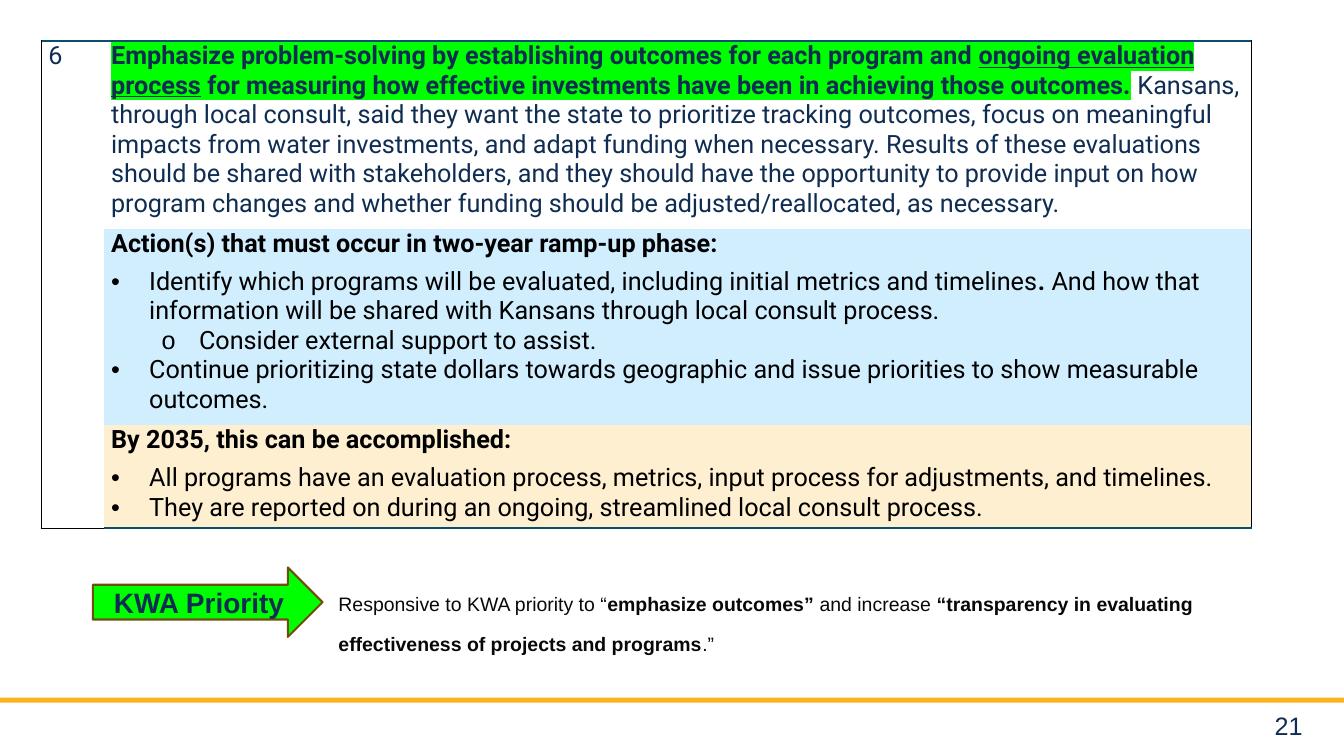
from lxml import etree
from pptx import Presentation
from pptx.dml.color import RGBColor
from pptx.enum.shapes import MSO_SHAPE
from pptx.enum.text import MSO_ANCHOR, PP_ALIGN
from pptx.oxml.ns import qn
from pptx.util import Cm, Pt

NAVY, BLACK, INK = "0F2D52", "000000", "080808"
GREEN, GOLD, BROWN, TEAL = "00FF00", "FCB31C", "6E4E0C", "074F6A"
PALE_BLUE, PALE_ORANGE = "D1EEFF", "FEEFD1"
EDGES = ("L", "R", "T", "B")


def rgb(color):
    return RGBColor.from_string(color)


def add_run(paragraph, text, size=18, font="Roboto", color=NAVY, bold=False,
            underline=False, highlight=None, baseline=None):
    run = paragraph.add_run()
    run.text = text
    run.font.size = Pt(size)
    run.font.name = font
    run.font.bold = bold
    run.font.underline = underline
    run.font.color.rgb = rgb(color)
    properties = run._r.get_or_add_rPr()
    if baseline:
        properties.set("baseline", str(baseline))
    if highlight:
        marker = etree.Element(qn("a:highlight"))
        etree.SubElement(marker, qn("a:srgbClr"), val=highlight)
        properties.find(qn("a:solidFill")).addnext(marker)


def set_bullet(paragraph, char, left, hanging):
    properties = paragraph._p.get_or_add_pPr()
    properties.set("marL", str(Cm(left)))
    properties.set("indent", str(-Cm(hanging)))
    etree.SubElement(properties, qn("a:buFont"), typeface="Arial")
    etree.SubElement(properties, qn("a:buChar"), char=char)


def style_cell(cell, fill=None, **borders):
    cell.margin_left = cell.margin_right = Cm(0.18)
    cell.margin_top = cell.margin_bottom = 0
    if fill:
        cell.fill.solid()
        cell.fill.fore_color.rgb = rgb(fill)
    else:
        cell.fill.background()
    properties = cell._tc.get_or_add_tcPr()
    for position, edge in enumerate(EDGES):
        color, width = borders.get(edge, (None, 0))
        line = etree.Element(qn(f"a:ln{edge}"), w=str(Pt(width)))
        if color:
            solid = etree.SubElement(line, qn("a:solidFill"))
            etree.SubElement(solid, qn("a:srgbClr"), val=color)
        else:
            etree.SubElement(line, qn("a:noFill"))
        properties.insert(position, line)


def fill_actions(cell, heading, items):
    title = cell.text_frame.paragraphs[0]
    title.space_after = Pt(6)
    add_run(title, heading, color=BLACK, bold=True)
    for level, pieces in items:
        item = cell.text_frame.add_paragraph()
        item.level = level
        if level:
            set_bullet(item, "o", 2.06, 0.79)
        else:
            set_bullet(item, "•", 0.96, 0.96)
        for text, bold in pieces:
            add_run(item, text, color=BLACK, bold=bold)


def add_recommendation(slide, left, top, width, height):
    table = slide.shapes.add_table(3, 2, Cm(left), Cm(top), Cm(width), Cm(height)).table
    table.first_row = table.horz_banding = False
    number_width = 1.58
    table.columns[0].width = Cm(number_width)
    table.columns[1].width = Cm(width - number_width)
    for row, share in zip(table.rows, (0.385, 0.404, 0.211)):
        row.height = Cm(height * share)

    thin, thick = (BLACK, 1), (TEAL, 1.5)
    style_cell(table.cell(0, 0), L=thin, T=thick, B=thin)
    style_cell(table.cell(1, 0), L=thin)
    style_cell(table.cell(2, 0), L=thin, B=thin)
    style_cell(table.cell(0, 1), T=thick, R=thin)
    style_cell(table.cell(1, 1), PALE_BLUE, R=thin)
    style_cell(table.cell(2, 1), PALE_ORANGE, R=thin, B=thick)
    table.cell(0, 0).merge(table.cell(2, 0))

    number = table.cell(0, 0).text_frame.paragraphs[0]
    number.space_after = Pt(6)
    add_run(number, "6")

    summary = table.cell(0, 1).text_frame.paragraphs[0]
    summary.space_after = Pt(6)
    emphasis = dict(bold=True, highlight=GREEN)
    add_run(summary, "Emphasize problem-solving by establishing outcomes for each program and ", **emphasis)
    add_run(summary, "ongoing evaluation process", underline=True, **emphasis)
    add_run(summary, " for measuring how effective investments have been in achieving those outcomes.", **emphasis)
    add_run(summary, " ", bold=True)
    add_run(summary, "Kansans, through local consult, said they want the state to prioritize tracking "
            "outcomes, focus on meaningful impacts from water investments, and adapt funding when "
            "necessary. Results of these evaluations should be shared with stakeholders, and they "
            "should have the opportunity to provide input on how program changes and whether "
            "funding should be adjusted/reallocated, as necessary.")

    fill_actions(table.cell(1, 1), "Action(s) that must occur in two-year ramp-up phase:", [
        (0, [("Identify which programs will be evaluated, including initial metrics and timelines", False),
             (". ", True),
             ("And how that information will be shared with Kansans through local consult process.", False)]),
        (1, [(" Consider external support to assist.", False)]),
        (0, [("Continue prioritizing state dollars towards geographic and issue priorities "
              "to show measurable outcomes.", False)]),
    ])
    fill_actions(table.cell(2, 1), "By 2035, this can be accomplished:", [
        (0, [("All programs have an evaluation process, metrics, input process for adjustments, "
              "and timelines.", False)]),
        (0, [("They are reported on during an ongoing, streamlined local consult process.", False)]),
    ])


def add_priority(slide, left, top, width, height):
    arrow_width = 5.79
    arrow = slide.shapes.add_shape(MSO_SHAPE.RIGHT_ARROW, Cm(left), Cm(top), Cm(arrow_width), Cm(height))
    arrow.shadow.inherit = False
    arrow.fill.solid()
    arrow.fill.fore_color.rgb = rgb(GREEN)
    arrow.line.color.rgb = rgb(BROWN)
    arrow.line.width = Pt(1.5)
    arrow.text_frame.vertical_anchor = MSO_ANCHOR.MIDDLE
    label = arrow.text_frame.paragraphs[0]
    label.alignment = PP_ALIGN.CENTER
    add_run(label, "KWA Priority", size=20, font="Arial", bold=True)

    note_left = left + arrow_width + 0.15
    note = slide.shapes.add_textbox(Cm(note_left), Cm(top + 0.38), Cm(left + width - note_left), Cm(1.96))
    note.text_frame.word_wrap = True
    response = note.text_frame.paragraphs[0]
    for text, bold in (
        ("Responsive to KWA priority to “", False),
        ("emphasize outcomes” ", True),
        ("and increase ", False),
        ("“transparency in evaluating effectiveness of projects and programs", True),
        (".”", False),
    ):
        add_run(response, text, size=24, font="Arial", color=INK, bold=bold, baseline=30000)


def add_footer(slide, left, top, width):
    rule = slide.shapes.add_shape(MSO_SHAPE.RECTANGLE, Cm(left), Cm(top), Cm(width), Cm(0.13))
    rule.shadow.inherit = False
    rule.fill.solid()
    rule.fill.fore_color.rgb = rgb(GOLD)
    rule.line.fill.background()
    page = slide.shapes.add_textbox(Cm(left + width - 3.18), Cm(top + 0.2), Cm(2.39), Cm(0.89))
    page.text_frame.word_wrap = True
    page_number = page.text_frame.paragraphs[0]
    page_number.alignment = PP_ALIGN.RIGHT
    add_run(page_number, "21", font="Arial")


def main():
    presentation = Presentation()
    presentation.slide_width = Cm(33.87)
    presentation.slide_height = Cm(19.05)
    slide = presentation.slides.add_slide(presentation.slide_layouts[6])
    add_footer(slide, 0, 17.58, 33.87)
    add_recommendation(slide, 1.04, 1.04, 30.5, 12.27)
    add_priority(slide, 2.34, 14.3, 30.6, 1.75)
    presentation.save("out.pptx")


if __name__ == "__main__":
    main()
